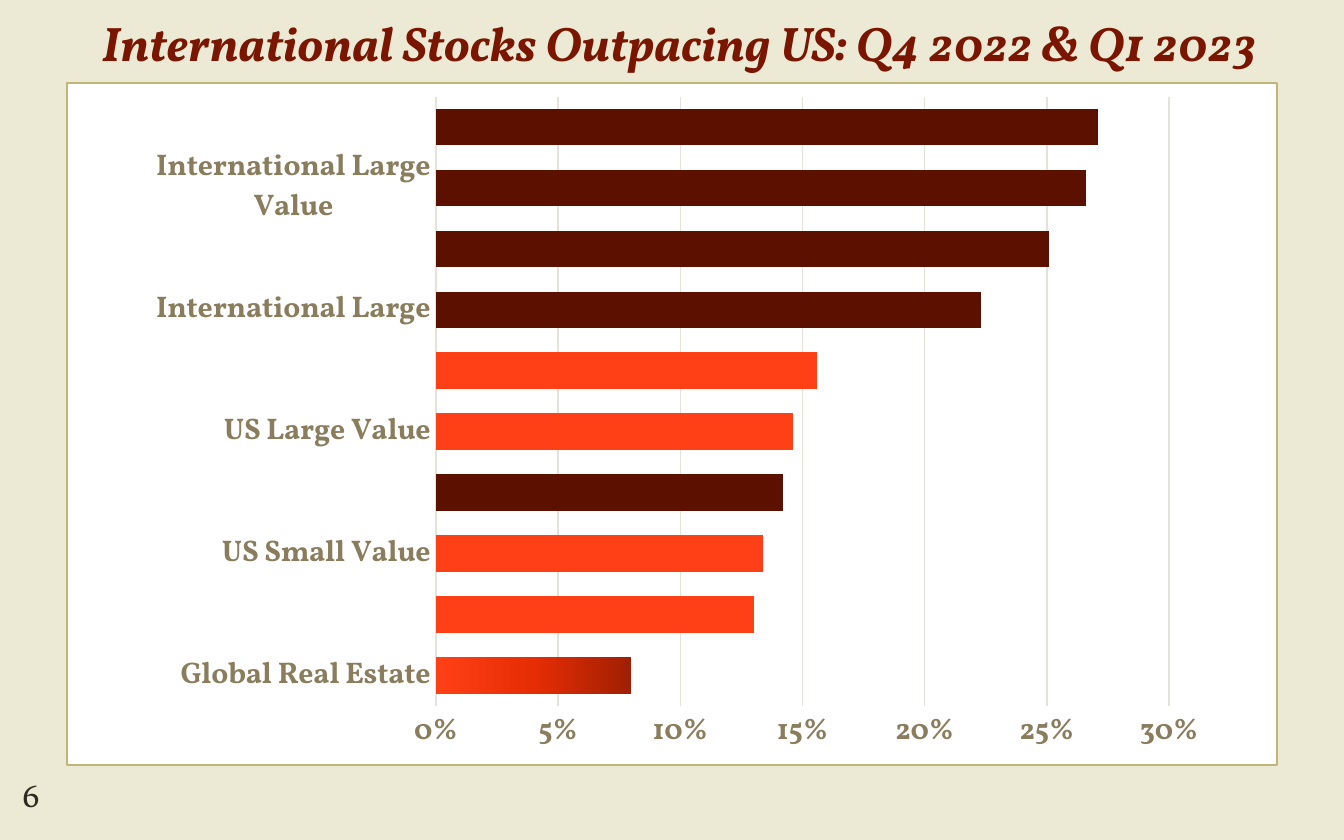
from copy import deepcopy
from dataclasses import dataclass

from pptx import Presentation
from pptx.chart.data import CategoryChartData as ChartData
from pptx.dml.color import RGBColor as Rgb
from pptx.enum.chart import XL_CHART_TYPE as ChartType, XL_TICK_MARK as TickMark
from pptx.enum.shapes import MSO_SHAPE as ShapeType
from pptx.enum.text import PP_ALIGN as Align
from pptx.util import Cm, Pt


@dataclass(frozen=True)
class Theme:
    font: str = "Vollkorn"
    background: Rgb = Rgb.from_string("ECEAD4")
    panel: Rgb = Rgb.from_string("FFFFFF")
    panel_line: Rgb = Rgb.from_string("C0B678")
    title: Rgb = Rgb.from_string("7A1600")
    text: Rgb = Rgb.from_string("2F2B20")
    axis: Rgb = Rgb.from_string("897D5D")
    grid: Rgb = Rgb.from_string("E5E2D9")
    international: Rgb = Rgb.from_string("5C1000")
    domestic: Rgb = Rgb.from_string("FF4016")
    global_stops: tuple = ("A11F03", "E62D04", "FF4016")
    title_size: Pt = Pt(26)
    axis_size: Pt = Pt(16)
    number_size: Pt = Pt(18)
    chart_size: Pt = Pt(10)


RETURNS = {
    "Global Real Estate": 0.08,
    "US Small": 0.13,
    "US Small Value": 0.134,
    "Emerging Mkts (ex China)": 0.142,
    "US Large Value": 0.146,
    "US Large": 0.156,
    "International Large": 0.223,
    "International Small": 0.251,
    "International Large Value": 0.266,
    "International Small Value": 0.271,
}


class SlideBuilder:
    def __init__(self, slide, theme):
        self.slide = slide
        self.theme = theme
        fill = slide.background.fill
        fill.solid()
        fill.fore_color.rgb = theme.background

    def style_font(self, font, size, color, bold=False, italic=False):
        font.name = self.theme.font
        font.size = size
        font.color.rgb = color
        font.bold = bold
        font.italic = italic

    def panel(self, *box):
        shape = self.slide.shapes.add_shape(ShapeType.RECTANGLE, *box)
        shape.shadow.inherit = False
        shape.fill.solid()
        shape.fill.fore_color.rgb = self.theme.panel
        shape.line.color.rgb = self.theme.panel_line
        shape.line.width = Pt(1)

    def text(self, box, wording, size, color, align=Align.LEFT, inset=Cm(0.25), **emphasis):
        frame = self.slide.shapes.add_textbox(*box).text_frame
        frame.word_wrap = True
        frame.margin_left = inset
        paragraph = frame.paragraphs[0]
        paragraph.text = wording
        paragraph.alignment = align
        self.style_font(paragraph.font, size, color, **emphasis)

    def bar_chart(self, box, returns):
        data = ChartData(number_format="0%")
        data.categories = list(returns)
        data.add_series("Series 1", list(returns.values()))
        chart = self.slide.shapes.add_chart(ChartType.BAR_CLUSTERED, *box, data).chart
        chart.has_legend = False
        chart.has_title = False
        self.style_font(chart.font, self.theme.chart_size, self.theme.text)
        self.style_axes(chart)
        plot = chart.plots[0]
        plot.gap_width = 66
        plot.vary_by_categories = False
        self.color_bars(plot.series[0], returns)

    def style_axes(self, chart):
        for axis in (chart.category_axis, chart.value_axis):
            axis.major_tick_mark = axis.minor_tick_mark = TickMark.NONE
            self.style_font(axis.tick_labels.font, self.theme.axis_size, self.theme.axis, bold=True)
        values = chart.value_axis
        values.minimum_scale, values.maximum_scale, values.major_unit = 0, 0.3, 0.05
        values.tick_labels.number_format = "0%"
        values.tick_labels.number_format_is_linked = False
        values.format.line.fill.background()
        for line in (chart.category_axis.format.line, values.major_gridlines.format.line):
            line.color.rgb = self.theme.grid
            line.width = Pt(0.75)

    def color_bars(self, series, names):
        """Dark for international, bright for US, a gradient for global."""
        series.invert_if_negative = False
        series.format.fill.solid()
        series.format.fill.fore_color.rgb = self.theme.international
        for index, name in enumerate(names):
            if name.startswith("US"):
                fill = series.points[index].format.fill
                fill.solid()
                fill.fore_color.rgb = self.theme.domestic
            elif name.startswith("Global"):
                self.blend(series.points[index].format)

    def blend(self, point_format):
        fill = point_format.fill
        fill.gradient()
        fill.gradient_angle = 180
        stop_list = point_format._element.find(".//{*}gsLst")
        stop_list.append(deepcopy(stop_list[-1]))
        colors = self.theme.global_stops
        for index, (stop, color) in enumerate(zip(fill.gradient_stops, colors)):
            stop.position = index / (len(colors) - 1)
            stop.color.rgb = Rgb.from_string(color)


def main():
    theme = Theme()
    presentation = Presentation()
    presentation.slide_width, presentation.slide_height = Cm(25.4), Cm(15.88)
    slide = presentation.slides.add_slide(presentation.slide_layouts[6])
    builder = SlideBuilder(slide, theme)

    top, height = Cm(1.57), Cm(12.9)
    builder.panel(Cm(1.27), top, Cm(22.86), height)
    builder.text((0, Cm(0.13), Cm(25.4), Cm(2.1)),
                 "International Stocks Outpacing US: Q4 2022 & Q1 2023",
                 theme.title_size, theme.title, Align.CENTER, Cm(0.55), bold=True, italic=True)
    builder.bar_chart((Cm(2.54), top, Cm(20.52), height), RETURNS)
    builder.text((Cm(0.18), Cm(14.5), Cm(1.07), Cm(1.07)), "6", theme.number_size, theme.text)
    presentation.save("out.pptx")


if __name__ == "__main__":
    main()
